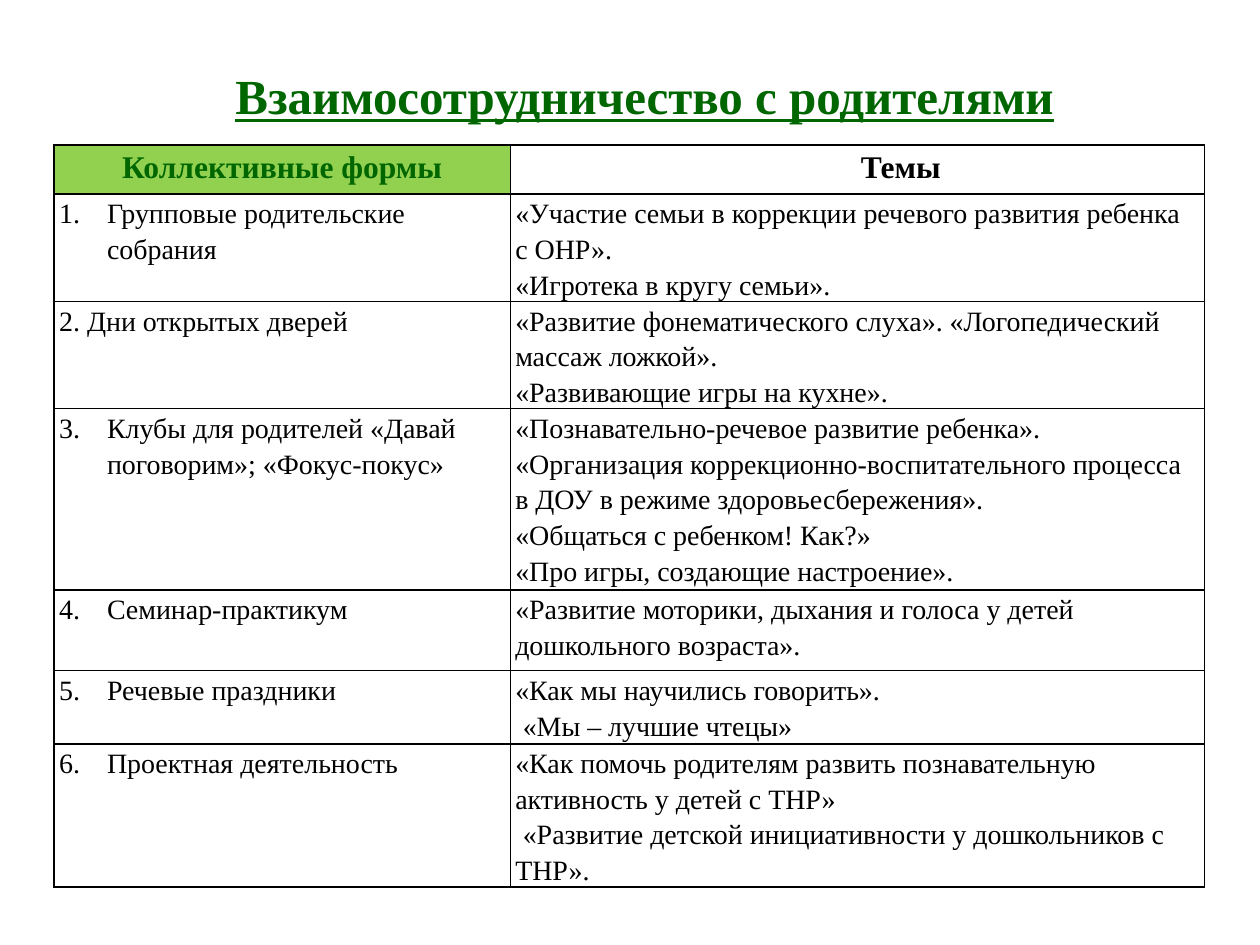
from dataclasses import dataclass

from lxml.etree import SubElement
from pptx import Presentation
from pptx.dml.color import RGBColor
from pptx.enum.text import MSO_ANCHOR, PP_ALIGN
from pptx.oxml.ns import qn
from pptx.util import Inches, Pt


@dataclass(frozen=True)
class Theme:
    """Colours, font and type sizes of the slide."""
    font: str = "Times New Roman"
    green: RGBColor = RGBColor(0x00, 0x66, 0x00)
    lime: RGBColor = RGBColor(0x92, 0xD0, 0x50)
    black: RGBColor = RGBColor(0x00, 0x00, 0x00)
    title: int = 28
    header: int = 18
    body: int = 16
    border: int = 1


@dataclass(frozen=True)
class Topic:
    """One paragraph of the topics column."""
    text: str
    align: PP_ALIGN = PP_ALIGN.LEFT
    indent: float = 0


THEME = Theme()
COLUMN_WIDTHS = (3.62, 5.51)
ROW_HEIGHTS = (0.39, 0.77, 0.85, 1.44, 0.64, 0.58, 0.85)
HANGING = 0.38
NUMBER_TAB = 0.28
LEAD = 0.06
HEADER_SHIFT = 0.69

FORMS = (
    ("Групповые родительские собрания", (
        Topic("«Участие семьи в коррекции речевого развития ребенка с ОНР»."),
        Topic("«Игротека в кругу семьи»."))),
    ("2. Дни открытых дверей", (
        Topic("«Развитие фонематического слуха». «Логопедический массаж ложкой»."),
        Topic("«Развивающие игры на кухне»."))),
    ("3.\tКлубы для родителей «Давай поговорим»; «Фокус-покус»", (
        Topic("«Познавательно-речевое развитие ребенка». «Организация "
              "коррекционно-воспитательного процесса в ДОУ в режиме здоровьесбережения»."),
        Topic("«Общаться с ребенком! Как?»", PP_ALIGN.JUSTIFY),
        Topic("«Про игры, создающие настроение».", PP_ALIGN.JUSTIFY))),
    ("4.\tСеминар-практикум", (
        Topic("«Развитие моторики, дыхания и голоса у детей дошкольного возраста»."),)),
    ("5.\tРечевые праздники", (
        Topic("«Как мы научились говорить»."),
        Topic("«Мы – лучшие чтецы»", indent=LEAD))),
    ("6.\tПроектная деятельность", (
        Topic("«Как помочь родителям развить познавательную активность у детей с ТНР»"),
        Topic("«Развитие детской инициативности у дошкольников с ТНР».", indent=LEAD))),
)


def write(paragraph, text, size, color, bold=False, underline=False):
    """Add one styled run to a paragraph."""
    run = paragraph.add_run()
    run.text = text
    font = run.font
    font.name, font.size, font.bold = THEME.font, Pt(size), bold
    font.underline = underline
    font.color.rgb = color


def set_indent(paragraph, left, first):
    """Set the left margin and first-line indent in inches."""
    properties = paragraph._p.get_or_add_pPr()
    properties.set("marL", str(Inches(left)))
    properties.set("indent", str(Inches(first)))
    return properties


def style_cell(cell, fill=None):
    """Give a cell its margins, borders and fill."""
    cell.margin_left = cell.margin_right = Inches(0.04)
    cell.margin_top = cell.margin_bottom = 0
    properties = cell._tc.get_or_add_tcPr()
    for side in ("a:lnL", "a:lnR", "a:lnT", "a:lnB"):
        line = SubElement(properties, qn(side), w=str(Pt(THEME.border)))
        solid = SubElement(line, qn("a:solidFill"))
        SubElement(solid, qn("a:srgbClr"), val=str(THEME.black))
    if fill is None:
        cell.fill.background()
    else:
        cell.fill.solid()
        cell.fill.fore_color.rgb = fill


def fill_header(cell, text, color, fill=None, shift=0):
    """Write a centred header cell."""
    style_cell(cell, fill)
    heading = cell.text_frame.paragraphs[0]
    set_indent(heading, shift, 0)
    heading.alignment, heading.line_spacing = PP_ALIGN.CENTER, 1.15
    write(heading, text, THEME.header, color, bold=True)


def fill_form(cell, text, auto_number):
    """Write a numbered form of work with a hanging indent."""
    style_cell(cell)
    form = cell.text_frame.paragraphs[0]
    properties = set_indent(form, HANGING, -HANGING)
    if auto_number:
        SubElement(properties, qn("a:buFont"), typeface="+mj-lt")
        SubElement(properties, qn("a:buAutoNum"), type="arabicPeriod")
    else:
        SubElement(properties, qn("a:buNone"))
        tabs = SubElement(properties, qn("a:tabLst"))
        SubElement(tabs, qn("a:tab"), pos=str(Inches(NUMBER_TAB)), algn="l")
    form.line_spacing = 1.15
    write(form, text, THEME.body, THEME.black)


def fill_topics(cell, topics):
    """Write the topics of one form, a paragraph each."""
    style_cell(cell)
    frame = cell.text_frame
    for index, topic in enumerate(topics):
        paragraph = frame.add_paragraph() if index else frame.paragraphs[0]
        set_indent(paragraph, 0, topic.indent)
        paragraph.alignment, paragraph.line_spacing = topic.align, 1.15
        write(paragraph, topic.text, THEME.body, THEME.black)


def add_title(slide, left, top, width, height):
    """Place the underlined title at the bottom of its box."""
    frame = slide.shapes.add_textbox(*map(Inches, (left, top, width, height))).text_frame
    frame.word_wrap = True
    frame.vertical_anchor = MSO_ANCHOR.BOTTOM
    write(frame.paragraphs[0], "Взаимосотрудничество с родителями",
          THEME.title, THEME.green, bold=True, underline=True)


def add_forms_table(slide, left, top, width, height):
    """Place the table of collective forms and their topics."""
    box = map(Inches, (left, top, width, height))
    table = slide.shapes.add_table(len(ROW_HEIGHTS), len(COLUMN_WIDTHS), *box).table
    table.horz_banding = False
    for column, column_width in zip(table.columns, COLUMN_WIDTHS):
        column.width = Inches(column_width)
    for row, row_height in zip(table.rows, ROW_HEIGHTS):
        row.height = Inches(row_height)
    fill_header(table.cell(0, 0), "Коллективные формы", THEME.green, THEME.lime)
    fill_header(table.cell(0, 1), "Темы", THEME.black, shift=HEADER_SHIFT)
    for row, (form, topics) in enumerate(FORMS, start=1):
        fill_form(table.cell(row, 0), form, auto_number=row == 1)
        fill_topics(table.cell(row, 1), topics)


def main():
    """Build and save the slide."""
    deck = Presentation()
    deck.slide_width, deck.slide_height = Inches(10), Inches(7.5)
    slide = deck.slides.add_slide(deck.slide_layouts[6])
    add_forms_table(slide, 0.43, 1.15, sum(COLUMN_WIDTHS), sum(ROW_HEIGHTS))
    add_title(slide, 1.77, 0, 6.85, 1.04)
    deck.save("out.pptx")


if __name__ == "__main__":
    main()
